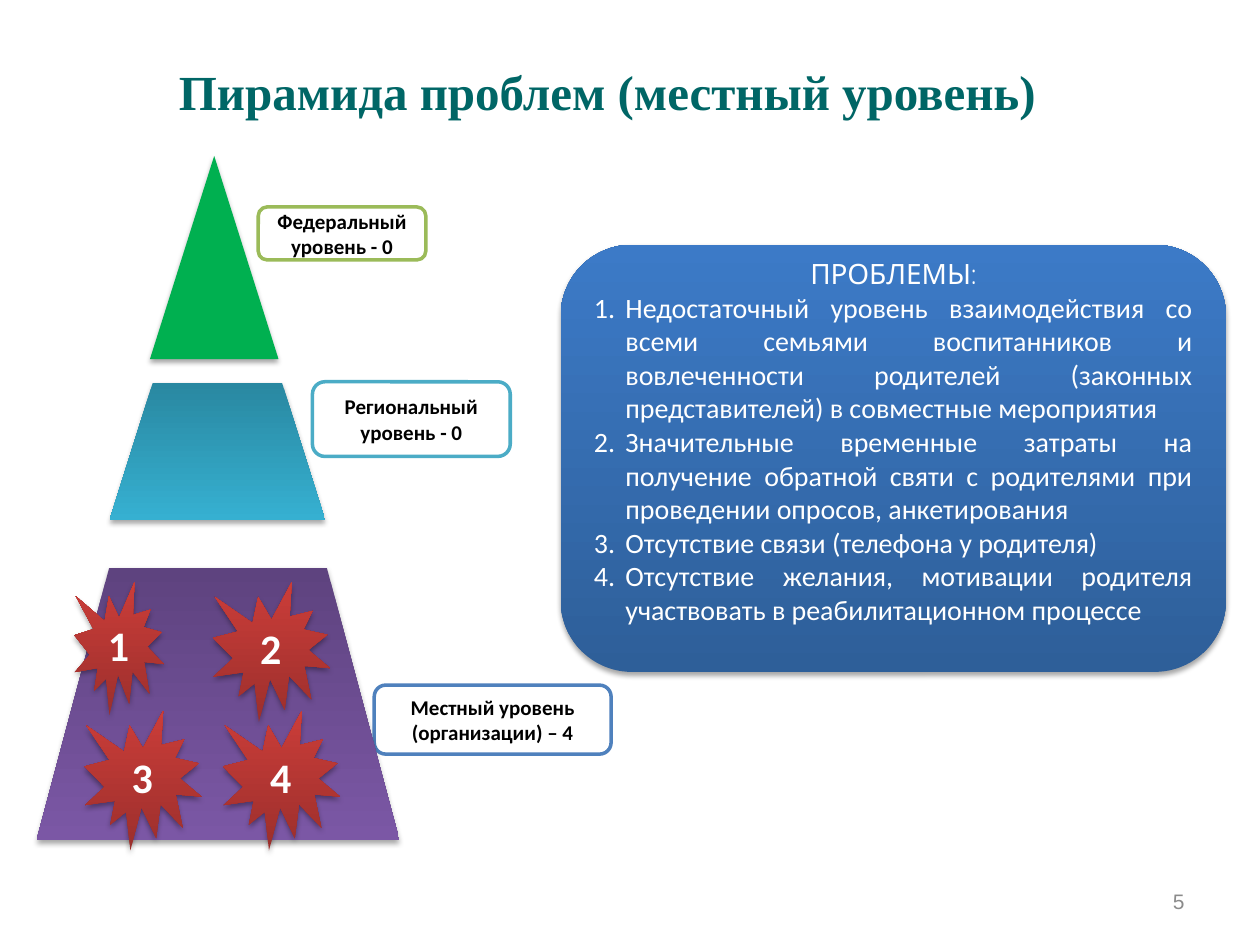
from lxml import etree
from pptx import Presentation
from pptx import util as u
from pptx.dml.color import RGBColor
from pptx.enum import shapes, text
from pptx.oxml import ns

WIDTH, HEIGHT = u.Inches(10), u.Inches(7.5)
COLORS = {
    "white": "FFFFFF", "black": "000000", "title": "006666", "number": "8B8B8B",
    "federal": "00B050", "federal_line": "9BBB59",
    "regional_dark": "2988A1", "regional_light": "36B0D1", "regional_line": "4BACC6",
    "local_dark": "5E437F", "local_light": "7B57A5", "local_line": "4F81BD",
    "star_dark": "9C2F2C", "star_light": "CB3D39",
    "panel_dark": "2E5F99", "panel_light": "3C7AC7",
}
PROBLEMS = [
    "Недостаточный уровень взаимодействия со всеми семьями воспитанников и вовлеченности "
    "родителей (законных представителей) в совместные мероприятия",
    "Значительные временные затраты на получение обратной святи с родителями при "
    "проведении опросов, анкетирования",
    "Отсутствие связи (телефона у родителя)",
    "Отсутствие желания, мотивации родителя участвовать в реабилитационном процессе",
]
LABELS = [
    ("Федеральный уровень - 0", "federal_line", (20.5, 21.9, 13.3, 5.6)),
    ("Региональный уровень - 0", "regional_line", (24.8, 40.4, 15.7, 7.9)),
    ("Местный уровень (организации) – 4", "local_line", (29.7, 72.5, 18.8, 7.3)),
]
STARS = [
    ("2", (16.9, 61.6, 9.3, 14.8)),
    ("1", (5.9, 61.6, 7.1, 14.1)),
    ("4", (17.7, 75.2, 9.3, 14.8)),
    ("3", (6.7, 75.2, 9.3, 14.8)),
]


def color(name):
    """Return the named colour."""
    return RGBColor.from_string(COLORS[name])


def area(left, top, width, height):
    """Turn percentages of the slide's size into lengths."""
    return [int(share * side / 100) for share, side in
            ((left, WIDTH), (top, HEIGHT), (width, WIDTH), (height, HEIGHT))]


def add_child(parent, tag, **attributes):
    """Append a drawing element to its parent."""
    child = etree.SubElement(parent, ns.qn(tag))
    for name, value in attributes.items():
        child.set(name, value)
    return child


def add_shape(page, kind, place, *fills):
    """Add a shape with a plain fill or a gradient that starts at the bottom."""
    shape = page.shapes.add_shape(kind, *area(*place))
    shape.shadow.inherit = False
    shape.line.fill.background()
    if len(fills) == 1:
        shape.fill.solid()
        shape.fill.fore_color.rgb = color(fills[0])
    else:
        shape.fill.gradient()
        shape.fill.gradient_angle = 90
        for stop, name, position in zip(shape.fill.gradient_stops, fills, (0, 1)):
            stop.color.rgb = color(name)
            stop.position = position
    return shape


def add_shadow(shape):
    """Give a shape a soft shadow straight below it."""
    effects = shape._element.spPr.find(ns.qn("a:effectLst"))
    shadow = add_child(effects, "a:outerShdw", blurRad=str(u.Pt(3.1)), dist=str(u.Pt(1.8)),
                       dir="5400000", rotWithShape="0")
    tint = add_child(shadow, "a:srgbClr", val=COLORS["black"])
    add_child(tint, "a:alpha", val="35000")


def add_span(para, words, size, name, font="Calibri", bold=False):
    """Add one formatted run to a paragraph."""
    span = para.add_run()
    span.text = words
    span.font.size = u.Pt(size)
    span.font.name = font
    span.font.bold = bold
    span.font.color.rgb = color(name)


def write_line(box, words, size, name, align=text.PP_ALIGN.CENTER, **style):
    """Write the only paragraph of a box."""
    para = box.text_frame.paragraphs[0]
    para.alignment = align
    add_span(para, words, size, name, **style)


def number_paragraph(para):
    """Turn a paragraph into an item of a numbered list."""
    properties = para._p.get_or_add_pPr()
    properties.set("marL", str(u.Inches(0.25)))
    properties.set("indent", str(-u.Inches(0.25)))
    add_child(add_child(properties, "a:buClr"), "a:srgbClr", val=COLORS["white"])
    add_child(properties, "a:buFont", typeface="+mj-lt")
    add_child(properties, "a:buAutoNum", type="arabicPeriod")


def add_label(page, words, line, place):
    """Add an outlined level label."""
    label = add_shape(page, shapes.MSO_SHAPE.ROUNDED_RECTANGLE, place, "white")
    label.line.color.rgb = color(line)
    label.line.width = u.Pt(2)
    write_line(label, words, 12, "black", bold=True)


def add_pyramid(page):
    """Add the three tiers of the pyramid."""
    tier = shapes.MSO_SHAPE.FLOWCHART_MANUAL_OPERATION
    local = add_shape(page, tier, (2.9, 60.1, 28.8, 28.8), "local_dark", "local_light")
    regional = add_shape(page, tier, (8.7, 40.5, 17.1, 14.5), "regional_dark", "regional_light")
    local.rotation = regional.rotation = 180
    federal = add_shape(page, shapes.MSO_SHAPE.FLOWCHART_EXTRACT,
                        (11.9, 16.5, 10.2, 21.5), "federal")
    for part in (local, regional, federal):
        add_shadow(part)


def add_star(page, digit, place):
    """Add a numbered burst."""
    star = add_shape(page, shapes.MSO_SHAPE.EXPLOSION1, place, "star_dark", "star_light")
    add_shadow(star)
    write_line(star, digit, 24, "white", bold=True)


def add_panel(page):
    """Add the panel that lists the problems."""
    panel = add_shape(page, shapes.MSO_SHAPE.ROUNDED_RECTANGLE, (44.5, 25.9, 52.8, 45.2),
                      "panel_dark", "panel_light")
    add_shadow(panel)
    panel.text_frame.margin_bottom = u.Inches(0.32)
    write_line(panel, "ПРОБЛЕМЫ:", 16, "white", font="Quicksand")
    for problem in PROBLEMS:
        para = panel.text_frame.add_paragraph()
        para.alignment = text.PP_ALIGN.JUSTIFY
        number_paragraph(para)
        add_span(para, problem, 16, "white")


def add_texts(page):
    """Add the title and the page number."""
    title = page.shapes.add_textbox(*area(13.2, 5.9, 70, 7.5))
    title.text_frame.word_wrap = False
    title.text_frame.auto_size = text.MSO_AUTO_SIZE.SHAPE_TO_FIT_TEXT
    write_line(title, "Пирамида проблем (местный уровень)", 28, "title",
               font="Times New Roman", bold=True)
    number = page.shapes.add_textbox(*area(71.7, 92.7, 23.3, 5.3))
    number.text_frame.word_wrap = True
    number.text_frame.vertical_anchor = text.MSO_ANCHOR.MIDDLE
    write_line(number, "5", 12, "number", text.PP_ALIGN.RIGHT, font="Arial")


def main():
    """Build the slide and save it."""
    deck = Presentation()
    deck.slide_width, deck.slide_height = WIDTH, HEIGHT
    page = deck.slides.add_slide(deck.slide_layouts[6])
    for label in LABELS:
        add_label(page, *label)
    add_pyramid(page)
    for star in STARS:
        add_star(page, *star)
    add_panel(page)
    add_texts(page)
    deck.save("out.pptx")


if __name__ == "__main__":
    main()
